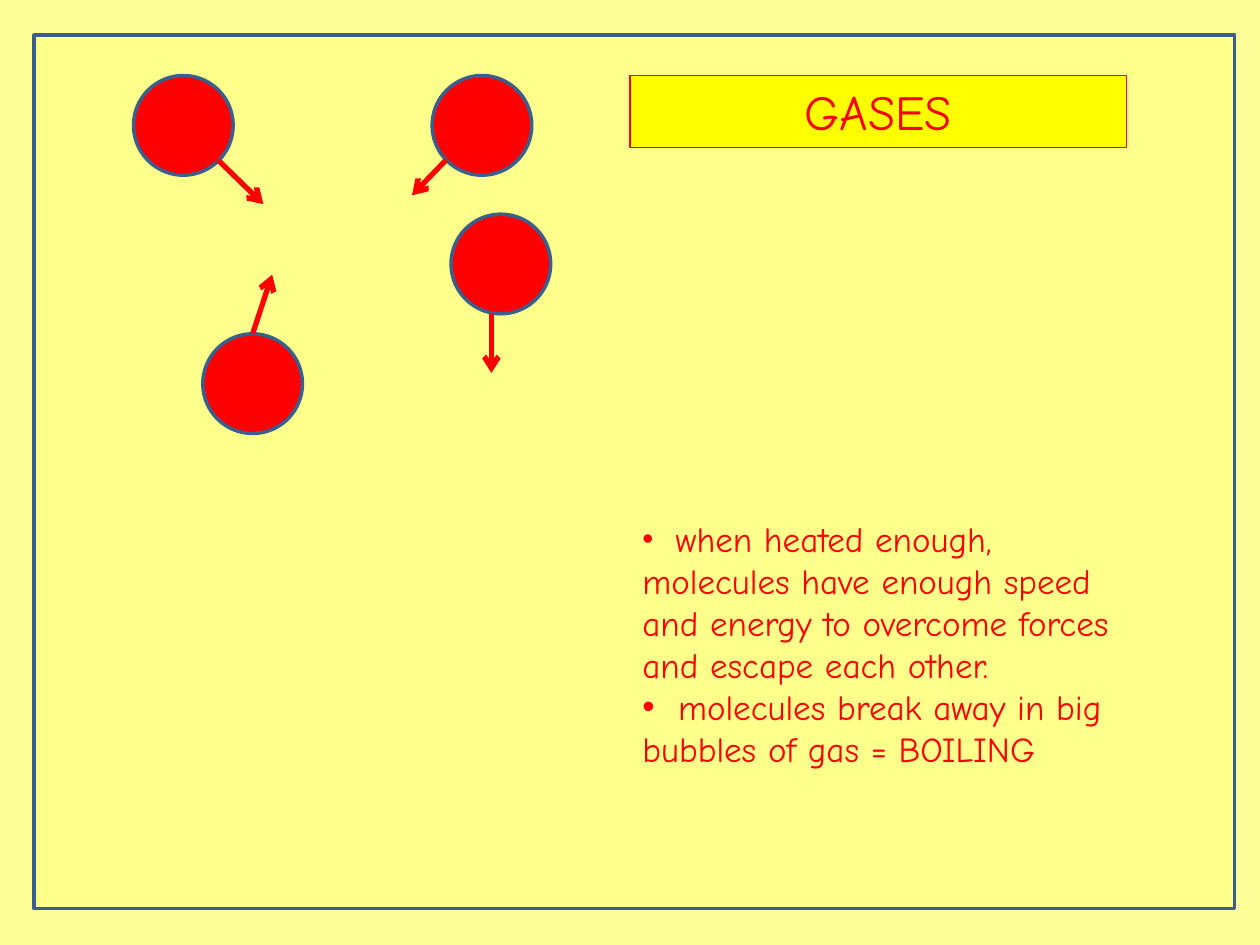
from pptx import Presentation
from pptx.dml.color import RGBColor
from pptx.enum.shapes import MSO_CONNECTOR, MSO_SHAPE
from pptx.enum.text import MSO_ANCHOR, MSO_AUTO_SIZE, PP_ALIGN
from pptx.oxml.ns import qn
from pptx.util import Inches, Pt
from lxml.etree import SubElement

COLORS = {
    "background": "FFFF99",
    "panel": "FFFF8B",
    "title": "FFFF00",
    "red": "FF0000",
    "outline": "3A5F8C",
}
DIAMETER = 0.79


class SlideBuilder:
    font = "Comic Neue"

    def __init__(self, slide):
        self.slide = slide

    def color(self, name):
        return RGBColor.from_string(COLORS[name])

    def background(self, name):
        fill = self.slide.background.fill
        fill.solid()
        fill.fore_color.rgb = self.color(name)

    def shape(self, kind, box, fill, line="outline", width=2):
        sp = self.slide.shapes.add_shape(kind, *map(Inches, box))
        sp.shadow.inherit = False
        sp.fill.solid()
        sp.fill.fore_color.rgb = self.color(fill)
        sp.line.color.rgb = self.color(line)
        sp.line.width = Pt(width)
        return sp

    def molecule(self, left, top):
        return self.shape(MSO_SHAPE.OVAL, (left, top, DIAMETER, DIAMETER), "red")

    def arrow(self, start, end):
        cn = self.slide.shapes.add_connector(
            MSO_CONNECTOR.STRAIGHT, *map(Inches, start + end))
        cn.line.color.rgb = self.color("red")
        cn.line.width = Pt(3)
        SubElement(cn.line._get_or_add_ln(), qn("a:tailEnd"), type="arrow")
        SubElement(cn._element.spPr, qn("a:effectLst"))
        return cn

    def run(self, p, text, size):
        r = p.add_run()
        r.text = text
        r.font.name = self.font
        r.font.size = Pt(size)
        r.font.color.rgb = self.color("red")

    def title(self, box, text):
        sp = self.shape(MSO_SHAPE.RECTANGLE, box, "title", "red", 0.75)
        tf = sp.text_frame
        tf.auto_size = MSO_AUTO_SIZE.SHAPE_TO_FIT_TEXT
        tf.vertical_anchor = MSO_ANCHOR.TOP
        p = tf.paragraphs[0]
        p.alignment = PP_ALIGN.CENTER
        self.run(p, text, 28)

    def bullets(self, box, items):
        tf = self.slide.shapes.add_textbox(*map(Inches, box)).text_frame
        tf.word_wrap = True
        tf.auto_size = MSO_AUTO_SIZE.SHAPE_TO_FIT_TEXT
        for i, runs in enumerate(items):
            p = tf.add_paragraph() if i else tf.paragraphs[0]
            pPr = p._p.get_or_add_pPr()
            SubElement(pPr, qn("a:buFont"), typeface="Arial")
            SubElement(pPr, qn("a:buChar"), char="•")
            for text, size in runs:
                self.run(p, text, size)


def main():
    prs = Presentation()
    prs.slide_width, prs.slide_height = Inches(10), Inches(7.5)
    s = SlideBuilder(prs.slides.add_slide(prs.slide_layouts[6]))

    # Background and framed panel
    s.background("background")
    s.shape(MSO_SHAPE.RECTANGLE, (0.27, 0.28, 9.53, 6.93), "panel")

    # Gas molecules
    s.molecule(1.06, 0.6)
    rising = s.molecule(1.61, 2.65)
    s.molecule(3.58, 1.7)
    s.molecule(3.43, 0.6)

    # Title and explanation
    s.title((5, 0.6, 3.94, 0.57), "GASES")
    s.bullets((5, 4.06, 4.02, 2.46), [
        [(" ", 18),
         (" when heated enough, molecules have enough speed and energy "
          "to overcome forces and escape each other.", 20)],
        [("  molecules break away in big bubbles of gas = BOILING", 20)],
    ])

    # Directions of movement
    s.arrow((1.73, 1.27), (2.09, 1.62))
    s.arrow((2.01, 2.65), (2.16, 2.18)).begin_connect(rising, 0)
    s.arrow((3.9, 2.49), (3.9, 2.96))
    s.arrow((3.54, 1.27), (3.27, 1.55))

    prs.save("out.pptx")


if __name__ == "__main__":
    main()
